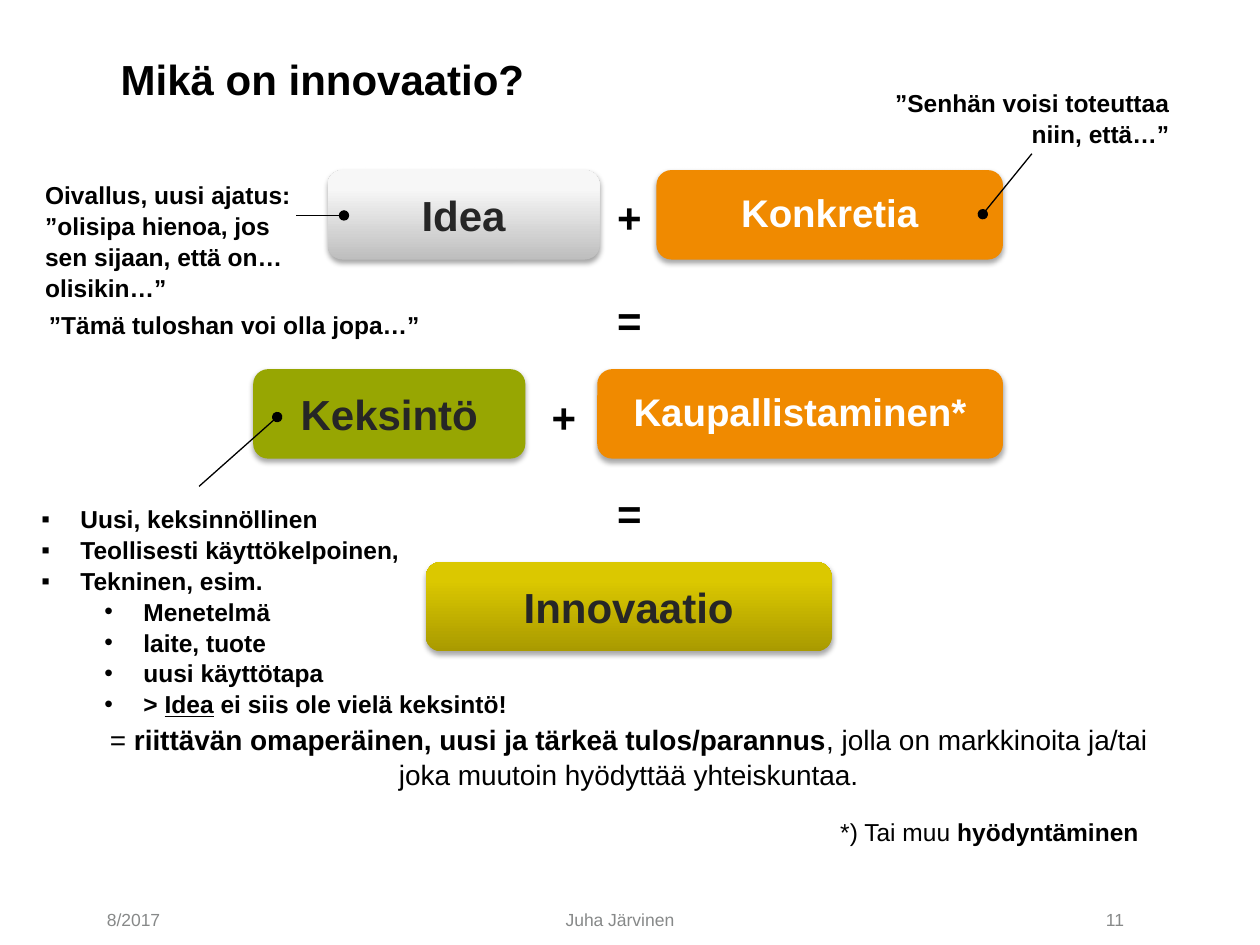
from copy import deepcopy
from dataclasses import dataclass

from lxml.etree import SubElement
from pptx import Presentation
from pptx.dml.color import RGBColor
from pptx.enum.shapes import MSO_CONNECTOR, MSO_SHAPE
from pptx.enum.text import MSO_ANCHOR, MSO_AUTO_SIZE, PP_ALIGN
from pptx.oxml.ns import qn
from pptx.util import Inches, Pt


@dataclass(frozen=True)
class Theme:
    font: str = "Arial"
    black: str = "000000"
    dark: str = "262626"
    white: str = "FFFFFF"
    grey: str = "878989"
    orange: str = "F08A00"
    green: str = "97A602"
    silver: tuple = ((0, "BEBEBE"), (0.8, "F7F7F7"), (1, "F8F8F8"))
    gold: tuple = ((0, "A99A00"), (0.8, "DBC800"), (1, "DCC900"))
    heading: int = 24
    subheading: int = 22
    body: int = 16
    note: int = 14
    footer: int = 10
    line_spacing: float = 1.05


LEFT, CENTER, RIGHT = PP_ALIGN.LEFT, PP_ALIGN.CENTER, PP_ALIGN.RIGHT


class SlideBuilder:
    def __init__(self, slide, theme):
        self.shapes = slide.shapes
        self.theme = theme

    def set_paragraph(self, paragraph, content, size, color, bold, align):
        """Content is a string, or (text, emphasis) pairs for mixed runs."""
        paragraph.alignment = align
        paragraph.line_spacing = self.theme.line_spacing
        font = paragraph.font
        font.name, font.size, font.bold = self.theme.font, Pt(size), bold
        font.color.rgb = RGBColor.from_string(color)
        parts = [(content, "")] if isinstance(content, str) else content
        for text, emphasis in parts:
            run = paragraph.add_run()
            run.text = text
            if emphasis == "bold":
                run.font.bold = True
            elif emphasis == "underline":
                run.font.underline = True

    def text(self, box, paragraphs, size, color=None, bold=True, align=LEFT,
             wrap=False, grow=True, bullets=None):
        frame = self.shapes.add_textbox(*map(Inches, box)).text_frame
        frame.word_wrap = wrap
        frame.auto_size = (MSO_AUTO_SIZE.SHAPE_TO_FIT_TEXT if grow
                           else MSO_AUTO_SIZE.NONE)
        for index, content in enumerate(paragraphs):
            paragraph = frame.add_paragraph() if index else frame.paragraphs[0]
            if bullets:
                self.bullet(paragraph, bullets[index])
            self.set_paragraph(paragraph, content, size,
                               color or self.theme.black, bold, align)

    def bullet(self, paragraph, level):
        paragraph.level = level
        properties = paragraph._p.get_or_add_pPr()
        properties.set("marL", str(Inches(0.31 + 0.5 * level)))
        properties.set("indent", str(Inches(-0.31)))
        SubElement(properties, qn("a:buFont"), typeface=self.theme.font)
        SubElement(properties, qn("a:buChar"), char="▪•"[level])

    def concept(self, left, top, width, label, fill, color, size):
        card = self.shapes.add_shape(
            MSO_SHAPE.ROUNDED_RECTANGLE,
            *map(Inches, (left, top, width, 0.71)))
        if isinstance(fill, str):
            card.fill.solid()
            card.fill.fore_color.rgb = RGBColor.from_string(fill)
        else:
            self.gradient(card, fill)
        card.line.fill.background()
        self.soft_shadow(card)
        frame = card.text_frame
        frame.word_wrap = True
        frame.vertical_anchor = MSO_ANCHOR.TOP
        frame.margin_top = Inches(0.1)
        self.set_paragraph(frame.paragraphs[0], label, size, color, True, CENTER)

    def gradient(self, card, stops):
        card.fill.gradient()
        card.fill.gradient_angle = 90
        stop_list = card._element.spPr.find(".//" + qn("a:gsLst"))
        while len(stop_list) < len(stops):
            stop_list.append(deepcopy(stop_list[0]))
        for stop, (position, color) in zip(card.fill.gradient_stops, stops):
            stop.position = position
            stop.color.rgb = RGBColor.from_string(color)

    def soft_shadow(self, card):
        card.shadow.inherit = False
        effects = card._element.spPr.find(qn("a:effectLst"))
        shadow = SubElement(effects, qn("a:outerShdw"), blurRad=str(Pt(3.1)),
                            dist=str(Pt(1.8)), dir="5400000", rotWithShape="0")
        tint = SubElement(shadow, qn("a:srgbClr"), val=self.theme.black)
        SubElement(tint, qn("a:alpha"), val="35000")

    def operator(self, left, top, sign):
        self.text((left, top, 0.55, 0.5), [sign], self.theme.heading,
                  align=CENTER, wrap=True)

    def pointer(self, start, end):
        """Line with a round dot at its start."""
        pointer = self.shapes.add_connector(
            MSO_CONNECTOR.STRAIGHT, *map(Inches, (*start, *end)))
        pointer.line.width = Pt(0.75)
        pointer.line.color.rgb = RGBColor.from_string(self.theme.black)
        properties = pointer._element.spPr
        SubElement(properties.find(qn("a:ln")), qn("a:headEnd"), type="oval")
        SubElement(properties, qn("a:effectLst"))

    def footer(self, left, width, text, align):
        self.text((left, 7.16, width, 0.34), [text], self.theme.footer,
                  self.theme.grey, bold=False, align=align, wrap=True, grow=False)


def main():
    deck = Presentation()
    deck.slide_width, deck.slide_height = Inches(10), Inches(7.5)
    theme = Theme()
    slide = SlideBuilder(deck.slides.add_slide(deck.slide_layouts[6]), theme)

    slide.text((0.86, 0.36, 3.43, 0.5), ["Mikä on innovaatio?"], theme.heading)

    idea_row, invention_row, innovation_row = 1.35, 2.93, 4.46
    for left, top, width, label, fill, color, size in (
        (2.6, idea_row, 2.16, "Idea", theme.silver, theme.dark, theme.heading),
        (5.21, idea_row, 2.75, "Konkretia", theme.orange, theme.white,
         theme.subheading),
        (2.01, invention_row, 2.16, "Keksintö", theme.green, theme.dark,
         theme.heading),
        (4.74, invention_row, 3.22, "Kaupallistaminen*", theme.orange,
         theme.white, theme.subheading),
        (3.38, innovation_row, 3.22, "Innovaatio", theme.gold, theme.dark,
         theme.heading),
    ):
        slide.concept(left, top, width, label, fill, color, size)

    for left, top, sign in ((4.72, 1.45, "+"), (4.72, 2.27, "="),
                            (4.2, 3.04, "+"), (4.72, 3.8, "=")):
        slide.operator(left, top, sign)

    slide.text((0.26, 1.37, 2.16, 1.04),
               ["Oivallus, uusi ajatus:", "”olisipa hienoa, jos",
                "sen sijaan, että on…", "olisikin…”"], theme.note)
    slide.text((7, 0.64, 2.38, 0.57),
               ["”Senhän voisi toteuttaa", "niin, että…”"], theme.note,
               align=RIGHT)
    slide.text((0.29, 2.4, 3.16, 0.34), ["”Tämä tuloshan voi olla jopa…”"],
               theme.note)
    slide.text((0.23, 3.94, 3.92, 1.75),
               ["Uusi, keksinnöllinen", "Teollisesti käyttökelpoinen,",
                "Tekninen, esim.", "Menetelmä", "laite, tuote",
                "uusi käyttötapa",
                [("> ", ""), ("Idea", "underline"),
                 (" ei siis ole vielä keksintö!", "")]],
               theme.note, bullets=(0, 0, 0, 1, 1, 1, 1))

    for start, end in (((2.73, 1.71), (2.35, 1.71)),
                       ((7.8, 1.7), (8.19, 1.22)),
                       ((2.2, 3.31), (1.58, 3.86))):
        slide.pointer(start, end)

    slide.text((0.72, 5.67, 8.54, 0.64),
               [[("= ", ""),
                 ("riittävän omaperäinen, uusi ja tärkeä tulos/parannus", "bold"),
                 (", jolla on markkinoita ja/tai", "")],
                "joka muutoin hyödyttää yhteiskuntaa."],
               theme.body, bold=False, align=CENTER)
    slide.text((6.57, 6.42, 2.58, 0.34),
               [[("*) Tai muu ", ""), ("hyödyntäminen", "bold")]],
               theme.note, bold=False)

    slide.footer(0.75, 1.67, "8/2017", LEFT)
    slide.footer(2.5, 4.84, "Juha Järvinen", CENTER)
    slide.footer(7.42, 1.6, "11", RIGHT)

    deck.save("out.pptx")


if __name__ == "__main__":
    main()
